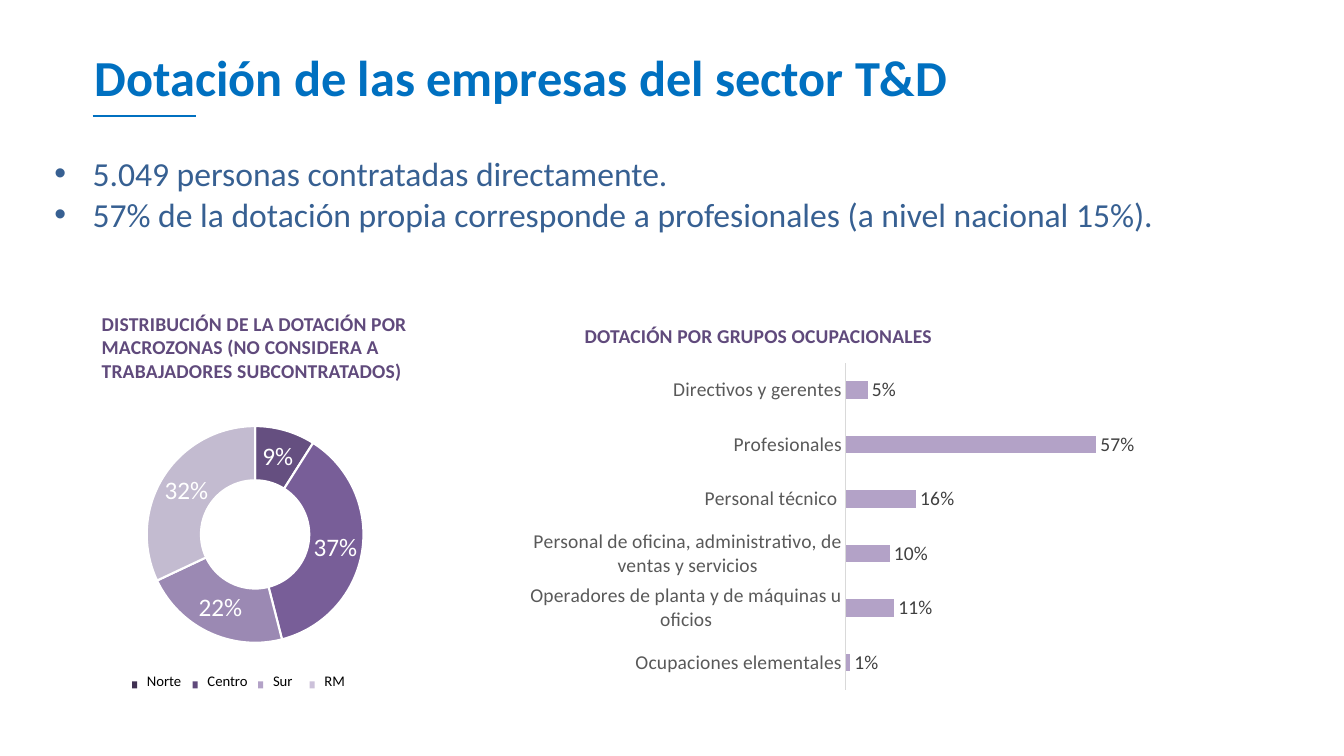
from pptx import Presentation
from pptx import util as u
from pptx.chart.data import CategoryChartData
from pptx.dml.color import RGBColor
from pptx.enum import chart as kinds, shapes, text
from pptx.oxml import parse_xml
from pptx.oxml.ns import nsdecls
from lxml import etree

PX = 9144  # 100 px to the inch
FONT = "Calibri"
WHITE = RGBColor(0xFF, 0xFF, 0xFF)
BLACK = RGBColor(0x00, 0x00, 0x00)
BLUE = RGBColor(0x00, 0x70, 0xC0)
BODY_BLUE = RGBColor(0x37, 0x60, 0x92)
HEADING = RGBColor(0x60, 0x4A, 0x7C)
AXIS_TEXT = RGBColor(0x59, 0x59, 0x59)
AXIS_LINE = RGBColor(0xD9, 0xD9, 0xD9)
BAR_LABEL = RGBColor(0x40, 0x40, 0x40)
LILAC = RGBColor(0xB3, 0xA2, 0xC7)

deck = Presentation()
deck.slide_width, deck.slide_height = 1333 * PX, 750 * PX
page = deck.slides.add_slide(deck.slide_layouts[6])


def add_text(parent, area, lines, size, color, bold=False, bullet=False):
    box = parent.add_textbox(*[n * PX for n in area])
    box.text_frame.word_wrap = True
    box.text_frame.text = "\n".join(lines)
    for para in box.text_frame.paragraphs:
        if bullet:
            para.alignment = text.PP_ALIGN.JUSTIFY
            props = para._p.get_or_add_pPr()
            props.set("marL", str(38 * PX))
            props.set("indent", str(-38 * PX))
            props.append(parse_xml(f'<a:buFont {nsdecls("a")} typeface="Arial"/>'))
            props.append(parse_xml(f'<a:buChar {nsdecls("a")} char="•"/>'))
        para.font.name, para.font.size = FONT, u.Pt(size)
        para.font.bold, para.font.color.rgb = bold, color
    return box


def add_chart(kind, area, names, values, layout, size, label_color):
    data = CategoryChartData(number_format="0%")
    data.categories = names
    data.add_series("Series 1", values)
    chart = page.shapes.add_chart(kind, *[n * PX for n in area], data).chart
    chart.has_title = chart.has_legend = False
    chart.font.name, chart.font.size = FONT, u.Pt(size)
    chart.font.color.rgb = BLACK
    labels = chart.plots[0].series[0].data_labels
    labels.show_value = True
    labels.number_format, labels.number_format_is_linked = "0%", False
    labels.font.name, labels.font.size = FONT, u.Pt(size)
    labels.font.color.rgb = label_color
    # Fixed inner plot area, as fractions of the chart
    settings = {"layoutTarget": "inner", "xMode": "edge", "yMode": "edge",
                **dict(zip("xywh", layout))}
    parts = "".join(f'<c:{tag} val="{val}"/>' for tag, val in settings.items())
    plot_area = chart._chartSpace.chart.plotArea
    for old in plot_area.findall("{*}layout"):
        plot_area.remove(old)
    plot_area.insert(0, parse_xml(
        f'<c:layout {nsdecls("c")}><c:manualLayout>{parts}</c:manualLayout></c:layout>'))
    return chart


# Title and its underline
rule = page.shapes.add_connector(
    shapes.MSO_CONNECTOR.STRAIGHT, 92 * PX, 115 * PX, 194 * PX, 115 * PX)
rule.line.color.rgb, rule.line.width = BLUE, u.Pt(1.5)
etree.SubElement(
    rule._element.spPr, "{http://schemas.openxmlformats.org/drawingml/2006/main}effectLst")
add_text(page.shapes, (84, 41, 876, 71),
         ["Dotación de las empresas del sector T&D"], 36, BLUE, bold=True)

# Key facts
add_text(page.shapes, (44, 147, 1213, 91), [
    "5.049 personas contratadas directamente.",
    "57% de la dotación propia corresponde a profesionales (a nivel nacional 15%).",
], 24, BODY_BLUE, bullet=True)

# Chart headings
for area, heading in [
    ((85, 304, 381, 81), "DISTRIBUCIÓN DE LA DOTACIÓN POR MACROZONAS "
                         "(NO CONSIDERA A TRABAJADORES SUBCONTRATADOS)"),
    ((564, 316, 435, 34), "DOTACIÓN POR GRUPOS OCUPACIONALES"),
]:
    box = add_text(page.shapes, area, [heading], 14, HEADING, bold=True)
    para = box.text_frame.paragraphs[0]
    para._p.get_or_add_pPr().set("marL", str(6 * PX))
    para.runs[0]._r.get_or_add_rPr().set("spc", "10")

# Staff by zone
zones = add_chart(kinds.XL_CHART_TYPE.DOUGHNUT, (65, 357, 393, 330),
                  ["1", "2", "3", "4"], [0.09, 0.37, 0.22, 0.32],
                  (0.205, 0.126, 0.547, 0.798), 18, WHITE)
for i, shade in enumerate(["654F80", "785E98", "9B89B3", "C3BBD0"]):
    slice_format = zones.plots[0].series[0].points[i].format
    slice_format.fill.solid()
    slice_format.fill.fore_color.rgb = RGBColor.from_string(shade)
    slice_format.line.color.rgb, slice_format.line.width = WHITE, u.Pt(1.5)

# Zone legend
legend = page.shapes.add_group_shape().shapes
for left, width, zone, shade in [
    (131, 63, "Norte", "403152"),
    (191, 70, "Centro", "604A7B"),
    (256, 46, "Sur", "B3A2C7"),
    (307, 47, "RM", "CCC1DA"),
]:
    key = legend.add_shape(
        shapes.MSO_SHAPE.RECTANGLE, left * PX, 676 * PX, 5 * PX, 7 * PX)
    key.shadow.inherit = False
    key.fill.solid()
    key.fill.fore_color.rgb = RGBColor.from_string(shade)
    key.line.fill.background()
    add_text(legend, (left + 5, 662, width, 47), [zone], 10.5, BLACK)

# Staff by occupation
jobs = add_chart(kinds.XL_CHART_TYPE.BAR_CLUSTERED, (526, 357, 619, 330), [
    " Directivos y gerentes",
    "Profesionales",
    "Personal técnico ",
    "Personal de oficina, administrativo, de ventas y servicios",
    "Operadores de planta y de máquinas u oficios",
    "Ocupaciones elementales",
], [0.05, 0.57, 0.16, 0.1, 0.11, 0.01], (0.503, 0.009, 0.425, 0.983), 14, BAR_LABEL)
plot = jobs.plots[0]
plot.gap_width, plot.vary_by_categories = 219, False
bars = plot.series[0]
bars.invert_if_negative = False
bars.format.fill.solid()
bars.format.fill.fore_color.rgb = LILAC
bars.data_labels.position = kinds.XL_LABEL_POSITION.OUTSIDE_END

names_axis = jobs.category_axis
names_axis.reverse_order = True
names_axis.major_tick_mark = kinds.XL_TICK_MARK.NONE
names_axis.format.line.color.rgb = AXIS_LINE
names_axis.format.line.width = u.Pt(0.75)
names_font = names_axis.tick_labels.font
names_font.name, names_font.size, names_font.color.rgb = FONT, u.Pt(14), AXIS_TEXT
share_axis = jobs.value_axis
share_axis.minimum_scale, share_axis.maximum_scale = 0, 0.6
share_axis.has_major_gridlines = share_axis.visible = False

deck.save("out.pptx")
